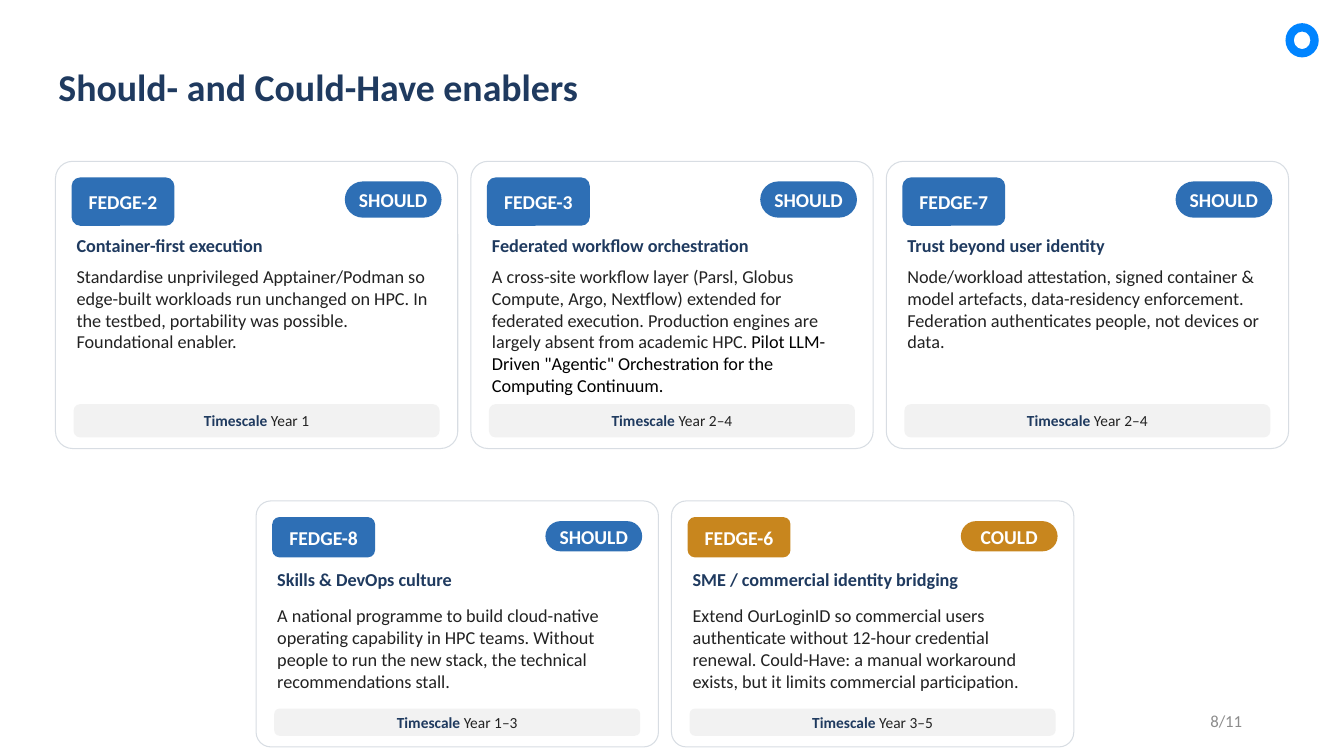
"""Build the slide of Should- and Could-Have enabler cards."""
from dataclasses import dataclass

from pptx import Presentation
from pptx import util as u
from pptx.dml import color
from pptx.enum import shapes, text

COLORS = {
    "navy": "1F3A5F", "should": "2E6FB5", "could": "C8861E", "white": "FFFFFF",
    "border": "D8DDE3", "bar": "F2F2F2", "body": "222222", "black": "000000",
    "number": "8C8C8C", "ring": "0084FF",
}
FONT = "Calibri"
CARD_WIDTH, CARD_PITCH, INNER_WIDTH = 3.99, 4.12, 3.63
LEFT, CENTER, RIGHT = text.PP_ALIGN.LEFT, text.PP_ALIGN.CENTER, text.PP_ALIGN.RIGHT
TOP, MIDDLE = text.MSO_ANCHOR.TOP, text.MSO_ANCHOR.MIDDLE
TEXT_INSETS, SHAPE_INSETS, PLAIN_INSETS = (0.03, 0.01), (0.08, 0.04), (0.1, 0.05)


@dataclass(frozen=True)
class Span:
    """A stretch of text with one format."""
    words: str
    color: str
    bold: bool = False


@dataclass(frozen=True)
class Enabler:
    """The content of one card."""
    code: str
    priority: str
    heading: str
    body: str
    years: str
    pilot: str = ""
    body_height: float = 0.9


@dataclass(frozen=True)
class Row:
    """A row of cards, with offsets measured from the card top."""
    left: float
    top: float
    height: float
    tag_height: float
    badge_height: float
    heading_offset: float
    bar_offset: float
    bar_height: float
    enablers: tuple[Enabler, ...]


ROWS = (
    Row(0.55, 1.6, 2.85, 0.48, 0.36, 0.71, 2.41, 0.33, (
        Enabler("FEDGE-2", "should", "Container-first execution",
                "Standardise unprivileged Apptainer/Podman so edge-built workloads run "
                "unchanged on HPC. In the testbed, portability was possible. "
                "Foundational enabler.", "Year 1"),
        Enabler("FEDGE-3", "should", "Federated workflow orchestration",
                "A cross-site workflow layer (Parsl, Globus Compute, Argo, Nextflow) "
                "extended for federated execution. Production engines are largely "
                "absent from academic HPC. ", "Year 2–4",
                'Pilot LLM-Driven "Agentic" Orchestration for the Computing Continuum.',
                1.56),
        Enabler("FEDGE-7", "should", "Trust beyond user identity",
                "Node/workload attestation, signed container & model artefacts, "
                "data-residency enforcement. Federation authenticates people, not "
                "devices or data.", "Year 2–4"),
    )),
    Row(2.54, 4.97, 2.44, 0.4, 0.3, 0.66, 2.06, 0.27, (
        Enabler("FEDGE-8", "should", "Skills & DevOps culture",
                "A national programme to build cloud-native operating capability in "
                "HPC teams. Without people to run the new stack, the technical "
                "recommendations stall.", "Year 1–3"),
        Enabler("FEDGE-6", "could", "SME / commercial identity bridging",
                "Extend OurLoginID so commercial users authenticate without 12-hour "
                "credential renewal. Could-Have: a manual workaround exists, but it "
                "limits commercial participation.", "Year 3–5"),
    )),
)


def rgb(name: str) -> color.RGBColor:
    """Return the named colour."""
    return color.RGBColor.from_string(COLORS[name])


def write(box, *spans: Span, size: float, align=LEFT, anchor=TOP,
          insets=TEXT_INSETS, after: float = 0, grow: bool = False) -> None:
    """Write one formatted paragraph into a shape."""
    frame = box.text_frame
    frame.word_wrap = True
    frame.auto_size = (text.MSO_AUTO_SIZE.SHAPE_TO_FIT_TEXT if grow
                       else text.MSO_AUTO_SIZE.NONE)
    frame.vertical_anchor = anchor
    frame.margin_left = frame.margin_right = u.Inches(insets[0])
    frame.margin_top = frame.margin_bottom = u.Inches(insets[1])
    para = frame.paragraphs[0]
    para.alignment = align
    para.space_after = u.Pt(after)
    for span in spans:
        run = para.add_run()
        run.text = span.words
        run.font.name = FONT
        run.font.size = u.Pt(size)
        run.font.bold = span.bold
        run.font.color.rgb = rgb(span.color)


def add_text(page, left: float, top: float, width: float, height: float,
             *spans: Span, **layout):
    """Add a text box."""
    box = page.shapes.add_textbox(*map(u.Inches, (left, top, width, height)))
    write(box, *spans, **layout)
    return box


def add_panel(page, left: float, top: float, width: float, height: float, fill: str,
              *, radius: float, line: str = ""):
    """Add a flat rounded rectangle."""
    box = page.shapes.add_shape(shapes.MSO_SHAPE.ROUNDED_RECTANGLE,
                                *map(u.Inches, (left, top, width, height)))
    box.adjustments[0] = radius
    paint(box, fill, line)
    return box


def paint(box, fill: str, line: str = "") -> None:
    """Fill a shape and draw or drop its outline."""
    box.shadow.inherit = False
    box.fill.solid()
    box.fill.fore_color.rgb = rgb(fill)
    if line:
        box.line.color.rgb = rgb(line)
        box.line.width = u.Pt(0.75)
    else:
        box.line.fill.background()


def add_label(page, left: float, top: float, width: float, height: float, fill: str,
              *spans: Span, radius: float, size: float = 14) -> None:
    """Add a rounded panel with centred text."""
    box = add_panel(page, left, top, width, height, fill, radius=radius)
    write(box, *spans, size=size, align=CENTER, anchor=MIDDLE,
          insets=SHAPE_INSETS, after=2)


def add_card(page, row: Row, column: int, item: Enabler) -> None:
    """Add one enabler card."""
    left, top = row.left + column * CARD_PITCH, row.top
    inner = left + 0.18
    add_panel(page, left, top, CARD_WIDTH, row.height, "white", radius=0.06, line="border")
    add_label(page, left + 0.16, top + 0.16, 1.02, row.tag_height, item.priority,
              Span(item.code, "white", True), radius=0.18)
    add_label(page, left + 2.87, top + 0.2, 0.96, row.badge_height, item.priority,
              Span(item.priority.upper(), "white", True), radius=0.5)
    add_text(page, inner, top + row.heading_offset, INNER_WIDTH, 0.34,
             Span(item.heading, "navy", True), size=13, grow=True)
    body = [Span(item.body, "body")]
    if item.pilot:
        body.append(Span(item.pilot, "black"))
    add_text(page, inner, top + 1.02, INNER_WIDTH, item.body_height, *body,
             size=13, grow=True)
    add_label(page, inner, top + row.bar_offset, INNER_WIDTH, row.bar_height, "bar",
              Span("Timescale ", "navy", True), Span(item.years, "body"),
              radius=0.2, size=11)


def main() -> None:
    """Build and save the deck."""
    deck = Presentation()
    deck.slide_width, deck.slide_height = u.Inches(13.33), u.Inches(7.5)
    page = deck.slides.add_slide(deck.slide_layouts.get_by_name("Title Only"))
    title = page.shapes.title
    title.left, title.top, title.width, title.height = map(u.Inches, (0.55, 0.62, 12.2, 0.85))
    write(title, Span("Should- and Could-Have enablers", "navy", True), size=27, grow=True)
    for row in ROWS:
        for column, item in enumerate(row.enablers):
            add_card(page, row, column, item)
    add_text(page, 9.42, 6.95, 3, 0.4, Span("8/11", "number"), size=12,
             align=RIGHT, anchor=MIDDLE, insets=PLAIN_INSETS)
    ring = page.shapes.add_shape(shapes.MSO_SHAPE.DONUT,
                                 *map(u.Inches, (12.75, 0.23, 0.33, 0.34)))
    paint(ring, "ring")
    deck.save("out.pptx")


if __name__ == "__main__":
    main()
